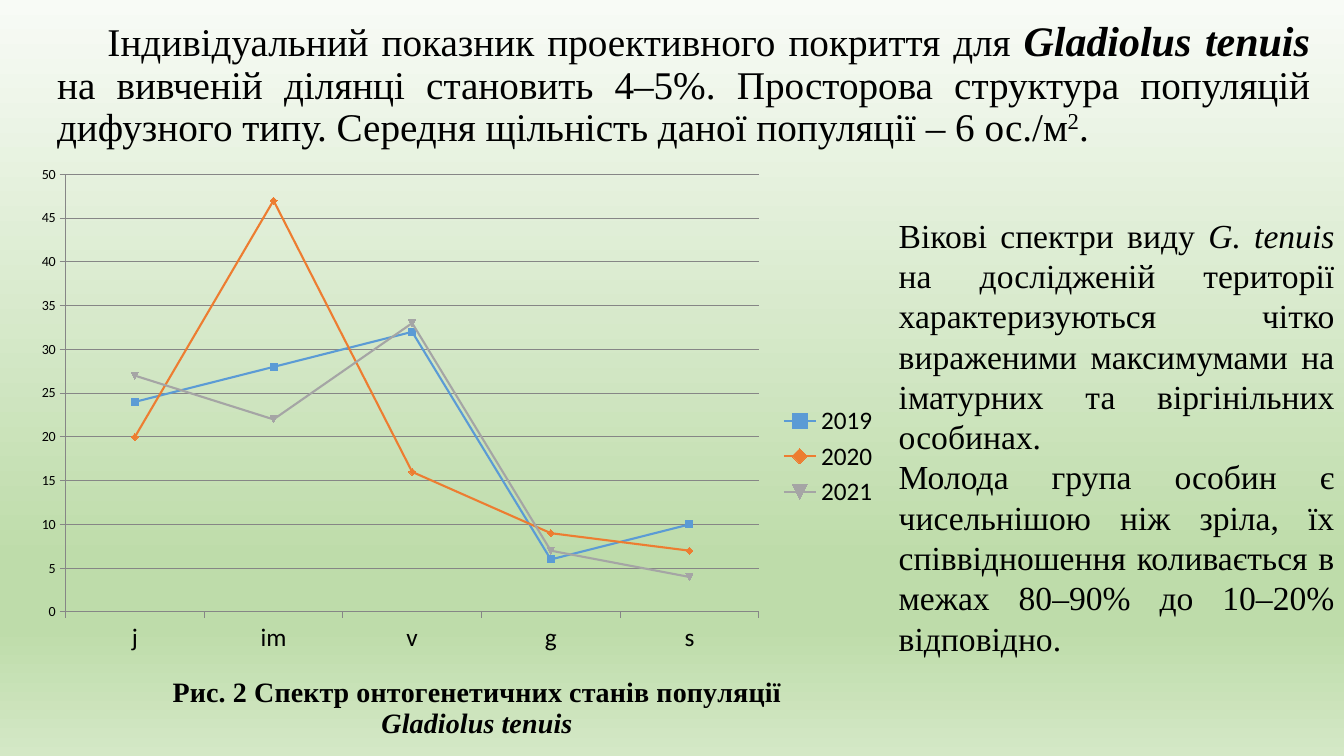
from lxml import etree
from pptx import Presentation
from pptx.chart.data import CategoryChartData
from pptx.dml.color import RGBColor
from pptx.enum.chart import XL_CHART_TYPE, XL_LEGEND_POSITION, XL_TICK_MARK
from pptx.enum.text import MSO_AUTO_SIZE, PP_ALIGN
from pptx.oxml import parse_xml
from pptx.oxml.ns import nsdecls, qn
from pptx.util import Cm, Pt

SERIF, SANS = "Times New Roman", "Calibri"
BLACK = RGBColor(0x00, 0x00, 0x00)
GRID = RGBColor(0x86, 0x86, 0x86)
BLUE = RGBColor(0x5B, 0x9B, 0xD5)
ORANGE = RGBColor(0xED, 0x7D, 0x31)
GREY = RGBColor(0xA5, 0xA5, 0xA5)
PALE = RGBColor(0xF8, 0xFB, 0xF6)
GREEN = RGBColor(0xBE, 0xDC, 0xAA)
LIGHT_GREEN = RGBColor(0xD4, 0xE8, 0xC6)
BACKGROUND = [(0, PALE), (74, GREEN), (83, GREEN), (100, LIGHT_GREEN)]

STAGES = ["j", "im", "v", "g", "s"]
YEARS = [
    ("2019", [24, 28, 32, 6, 10], BLUE),
    ("2020", [20, 47, 16, 9, 7], ORANGE),
    ("2021", [27, 22, 33, 7, 4], GREY),
]


def set_background(slide, stops):
    """Fill the slide with a top-to-bottom gradient of (percent, colour) stops."""
    gs = "".join(f'<a:gs pos="{pos * 1000}"><a:srgbClr val="{color}"/></a:gs>'
                 for pos, color in stops)
    fill = slide.background.fill
    fill.solid()
    bg_pr = slide.element.find(".//" + qn("p:bgPr"))
    bg_pr.replace(bg_pr[0], parse_xml(
        f'<a:gradFill {nsdecls("a")} rotWithShape="1"><a:gsLst>{gs}</a:gsLst>'
        '<a:lin ang="5400000" scaled="0"/></a:gradFill>'))


def style_font(font, size, name=SANS, bold=False, italic=False):
    font.size, font.name = Pt(size), name
    font.bold, font.italic = bold, italic
    font.color.rgb = BLACK


def add_run(p, text, size, bold=False, italic=False):
    r = p.add_run()
    r.text = text
    style_font(r.font, size, SERIF, bold, italic)
    return r


def add_justified_box(slide, left, top, width, height, paragraphs, spacing=1.0):
    """Each paragraph is a list of argument tuples for add_run."""
    sp = slide.shapes.add_textbox(left, top, width, height)
    tf = sp.text_frame
    tf.word_wrap = True
    for i, runs in enumerate(paragraphs):
        p = tf.add_paragraph() if i else tf.paragraphs[0]
        p.alignment = PP_ALIGN.JUSTIFY
        p.line_spacing = spacing
        for run in runs:
            add_run(p, *run)
    return sp


def set_layout(parent, before, x, y, w=None, h=None):
    """Place a chart part by fractions of the chart area."""
    for old in parent.findall(qn("c:layout")):
        parent.remove(old)
    layout = etree.Element(qn("c:layout"))
    manual = etree.SubElement(layout, qn("c:manualLayout"))
    items = [("xMode", "edge"), ("yMode", "edge"), ("x", x), ("y", y)]
    if w is not None:
        items = [("layoutTarget", "inner")] + items + [("w", w), ("h", h)]
    for tag, value in items:
        etree.SubElement(manual, qn("c:" + tag)).set("val", str(value))
    parent.insert(before, layout)


def style_axis(axis, size):
    axis.major_tick_mark = XL_TICK_MARK.OUTSIDE
    axis.minor_tick_mark = XL_TICK_MARK.NONE
    style_font(axis.tick_labels.font, size)
    axis.format.line.color.rgb = GRID
    axis.format.line.width = Pt(0.75)


def style_series(series, color):
    series.smooth = False
    series.format.line.color.rgb = color
    series.format.line.width = Pt(1.5)
    series.marker.size = 5
    series.marker.format.fill.solid()
    series.marker.format.fill.fore_color.rgb = color
    series.marker.format.line.color.rgb = color


def add_spectrum_chart(slide, left, top, width, height):
    data = CategoryChartData()
    data.categories = STAGES
    for name, values, _ in YEARS:
        data.add_series(name, values)
    chart = slide.shapes.add_chart(
        XL_CHART_TYPE.LINE_MARKERS, left, top, width, height, data).chart
    chart.has_title = False
    style_font(chart.font, 10)
    plot = chart.plots[0]
    plot.vary_by_categories = False
    for series, (_, _, color) in zip(plot.series, YEARS):
        style_series(series, color)

    style_axis(chart.category_axis, 18)
    value_axis = chart.value_axis
    style_axis(value_axis, 10)
    value_axis.minimum_scale, value_axis.maximum_scale = 0, 50
    value_axis.major_unit = 5
    value_axis.has_major_gridlines = True
    value_axis.major_gridlines.format.line.color.rgb = GRID
    value_axis.major_gridlines.format.line.width = Pt(0.75)

    title = chart.category_axis.axis_title
    p = title.text_frame.paragraphs[0]
    add_run(p, "Рис. 2 Спектр онтогенетичних станів популяції ", 20, True)
    add_run(p, "Gladiolus tenuis", 20, True, True)
    set_layout(title._element, 1, 0.17, 0.86)
    set_layout(plot._element.getparent(), 0, 0.05, 0.03, 0.8, 0.73)

    chart.has_legend = True
    chart.legend.position = XL_LEGEND_POSITION.RIGHT
    chart.legend.include_in_layout = False
    style_font(chart.legend.font, 18)


def main():
    prs = Presentation()
    prs.slide_width, prs.slide_height = Cm(33.87), Cm(19.05)
    slide = prs.slides.add_slide(prs.slide_layouts[6])
    set_background(slide, BACKGROUND)

    intro = add_justified_box(
        slide, Cm(1.19), Cm(0.38), Cm(32.08), Cm(4.17),
        [[("\tІндивідуальний показник проективного покриття для ", 28),
          ("Gladiolus tenuis ", 30, True, True),
          ("на вивченій ділянці становить 4–5%. Просторова структура популяцій "
           "дифузного типу. Середня щільність даної популяції – 6 ос./м", 28),
          ("2", 28), (".", 28)]], spacing=0.9)
    superscript = intro.text_frame.paragraphs[0].runs[3]
    superscript.font._element.set("baseline", "30000")

    add_spectrum_chart(slide, Cm(0.56), Cm(3.94), Cm(21.84), Cm(15.11))

    spectra = add_justified_box(
        slide, Cm(22.4), Cm(5.28), Cm(11.48), Cm(11.53),
        [[("Вікові спектри виду ", 24), ("G. tenuis ", 24, False, True),
          ("на дослідженій території характеризуються чітко вираженими "
           "максимумами на іматурних та віргінільних особинах.", 24)],
         [("Молода група особин є чисельнішою ніж зріла, їх співвідношення "
           "коливається в межах 80–90% до 10–20% відповідно.", 24)]])
    spectra.text_frame.auto_size = MSO_AUTO_SIZE.SHAPE_TO_FIT_TEXT

    prs.save("out.pptx")


if __name__ == "__main__":
    main()
